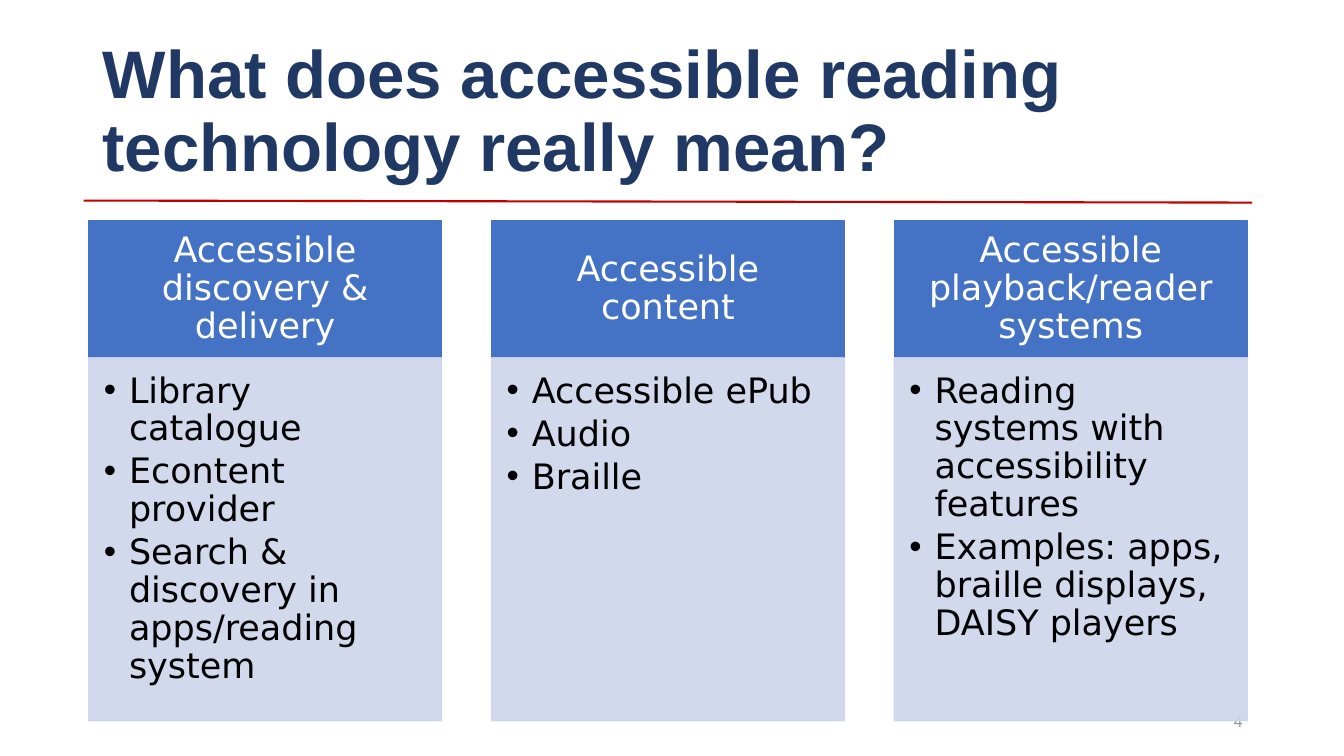
from lxml import etree
from pptx import Presentation
from pptx.dml.color import RGBColor
from pptx.enum import shapes, text
from pptx.oxml import ns
from pptx.util import Inches, Pt

TITLE = "What does accessible reading technology really mean?"
PAGE_NUMBER = "4"
COLUMNS = [
    ("Accessible discovery & delivery",
     ["Library catalogue", "Econtent provider",
      "Search & discovery in apps/reading system"]),
    ("Accessible content",
     ["Accessible ePub", "Audio", "Braille"]),
    ("Accessible playback/reader systems",
     ["Reading systems with accessibility features",
      "Examples: apps, braille displays, DAISY players"]),
]

THEME = {
    "title": ("Arial", 48, "203864", True),
    "number": ("Calibri", 12, "8C8C8C", False),
    "heading": ("DejaVu Sans", 25, "FFFFFF", False),
    "bullet": ("DejaVu Sans", 25, "000000", False),
    "rule": "C00000",
    "heading_fill": "4472C4",
    "panel_fill": "CFD5EA",
    "panel_alpha": 90,
}

LEFT, PITCH, WIDTH = 0.88, 3.995, 3.5
HEADING_TOP, HEADING_HEIGHT, PANEL_HEIGHT = 2.19, 1.36, 3.6
INDENT = 0.25


def style(paragraph, role):
    face, size, color, bold = THEME[role]
    font = paragraph.font
    font.name, font.size, font.bold = face, Pt(size), bold
    font.color.rgb = RGBColor.from_string(color)


def set_frame(frame, anchor, insets=(0.1, 0.05, 0.1, 0.05)):
    frame.word_wrap = True
    frame.vertical_anchor = anchor
    (frame.margin_left, frame.margin_top,
     frame.margin_right, frame.margin_bottom) = map(Inches, insets)


def add_label(slide, box, words, role, align, spacing):
    frame = slide.shapes.add_textbox(*map(Inches, box)).text_frame
    set_frame(frame, text.MSO_ANCHOR.MIDDLE)
    label = frame.paragraphs[0]
    label.text, label.alignment, label.line_spacing = words, align, spacing
    style(label, role)


def add_block(slide, box, color, alpha=100):
    block = slide.shapes.add_shape(
        shapes.MSO_SHAPE.RECTANGLE, *map(Inches, box))
    block.shadow.inherit = False
    block.fill.solid()
    block.fill.fore_color.rgb = RGBColor.from_string(color)
    block.line.color.rgb = RGBColor.from_string(color)
    block.line.width = Pt(1)
    if alpha < 100:
        for paint in block._element.spPr.iter(ns.qn("a:srgbClr")):
            etree.SubElement(paint, ns.qn("a:alpha"), val=str(alpha * 1000))
    return block.text_frame


def add_bullet(paragraph):
    props = paragraph._p.get_or_add_pPr()
    props.set("marL", str(Inches(INDENT)))
    props.set("indent", str(-Inches(INDENT)))
    etree.SubElement(props, ns.qn("a:buFont"), typeface="Arial")
    etree.SubElement(props, ns.qn("a:buChar"), char="•")


def add_column(slide, left, heading, items):
    frame = add_block(slide, (left, HEADING_TOP, WIDTH, HEADING_HEIGHT),
                      THEME["heading_fill"])
    set_frame(frame, text.MSO_ANCHOR.MIDDLE, (0.19, 0.11, 0.19, 0.11))
    head = frame.paragraphs[0]
    head.text, head.alignment = heading, text.PP_ALIGN.CENTER
    head.line_spacing = 0.9
    style(head, "heading")

    panel_top = HEADING_TOP + HEADING_HEIGHT
    frame = add_block(slide, (left, panel_top, WIDTH, PANEL_HEIGHT),
                      THEME["panel_fill"], THEME["panel_alpha"])
    set_frame(frame, text.MSO_ANCHOR.TOP, (0.15, 0.15, 0.19, 0.22))
    for index, item in enumerate(items):
        entry = frame.add_paragraph() if index else frame.paragraphs[0]
        entry.text, entry.level = item, 1
        entry.alignment = text.PP_ALIGN.LEFT
        entry.line_spacing, entry.space_after = 0.9, Pt(3.75)
        add_bullet(entry)
        style(entry, "bullet")


def main():
    deck = Presentation()
    deck.slide_width, deck.slide_height = Inches(13.33), Inches(7.5)
    slide = deck.slides.add_slide(deck.slide_layouts[6])

    add_label(slide, (0.92, 0.4, 11.5, 1.45), TITLE, "title",
              text.PP_ALIGN.LEFT, 0.9)
    rule = slide.shapes.add_connector(
        shapes.MSO_CONNECTOR.STRAIGHT,
        *map(Inches, (0.83, 1.99, 12.42, 2.01)))
    rule.line.color.rgb = RGBColor.from_string(THEME["rule"])
    rule.line.width = Pt(1.5)
    etree.SubElement(rule._element.spPr, ns.qn("a:effectLst"))
    add_label(slide, (9.42, 6.95, 3, 0.4), PAGE_NUMBER, "number",
              text.PP_ALIGN.RIGHT, 1.0)

    for index, (heading, items) in enumerate(COLUMNS):
        add_column(slide, LEFT + index * PITCH, heading, items)

    deck.save("out.pptx")


if __name__ == "__main__":
    main()
